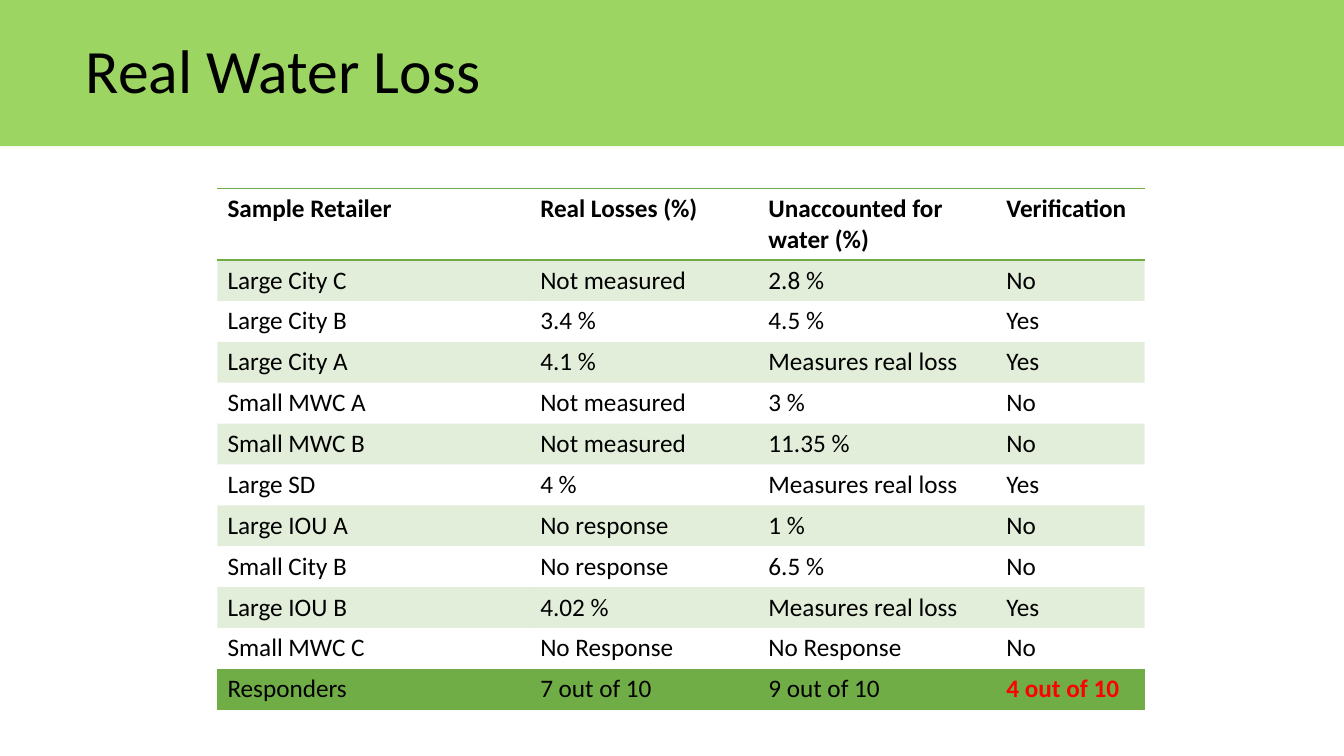
from lxml import etree
from pptx import Presentation
from pptx.dml.color import RGBColor
from pptx.enum import text
from pptx.oxml import ns
from pptx.util import Pt

FONT = "Calibri"
BLACK, RED, BANNER_GREEN, TABLE_GREEN = "000000", "FF0000", "92D050", "70AD47"
PLAIN_TABLE_STYLE = "{2D5ABB26-0587-4C30-8999-92F81FD0307C}"
COLUMN_WIDTHS = [223.4, 163, 170, 106]
ROW_HEIGHT = 29.2
ROWS = [
    ("Sample Retailer", "Real Losses (%)", "Unaccounted for water (%)", "Verification"),
    ("Large City C", "Not measured", "2.8 %", "No"),
    ("Large City B", "3.4 %", "4.5 %", "Yes"),
    ("Large City A", "4.1 %", "Measures real loss", "Yes"),
    ("Small MWC A", "Not measured", "3 %", "No"),
    ("Small MWC B", "Not measured", "11.35 %", "No"),
    ("Large SD", "4 %", "Measures real loss", "Yes"),
    ("Large IOU A", "No response", "1 %", "No"),
    ("Small City B", "No response", "6.5 %", "No"),
    ("Large IOU B", "4.02 %", "Measures real loss", "Yes"),
    ("Small MWC C", "No Response", "No Response", "No"),
    ("Responders", "7 out of 10", "9 out of 10", "4 out of 10"),
]


def set_color(color_format, color):
    color_format.rgb = RGBColor.from_string(color)


def fill_translucent(fill, color, percent):
    fill.solid()
    set_color(fill.fore_color, color)
    rgb = fill._xPr.find(".//" + ns.qn("a:srgbClr"))
    etree.SubElement(rgb, ns.qn("a:alpha"), val=str(percent * 1000))


def format_paragraph(paragraph, size, color=BLACK, bold=False):
    font = paragraph.font
    font.name, font.size, font.bold = FONT, Pt(size), bold
    set_color(font.color, color)


def add_border(cell, side):
    """Draw one green cell edge; side is T or B. Call it before filling the cell."""
    properties = cell._tc.get_or_add_tcPr()
    line = etree.SubElement(properties, ns.qn("a:ln" + side), w=str(Pt(1)))
    solid = etree.SubElement(line, ns.qn("a:solidFill"))
    etree.SubElement(solid, ns.qn("a:srgbClr"), val=TABLE_GREEN)


def add_title_banner(slide, title):
    banner = slide.shapes.title
    banner.left, banner.top, banner.width, banner.height = Pt(0), Pt(0), Pt(960), Pt(104.4)
    fill_translucent(banner.fill, BANNER_GREEN, 89)
    frame = banner.text_frame
    frame.text = title
    frame.word_wrap = True
    frame.auto_size = text.MSO_AUTO_SIZE.NONE
    frame.vertical_anchor = text.MSO_ANCHOR.MIDDLE
    frame.margin_left = Pt(61.2)
    paragraph = frame.paragraphs[0]
    paragraph.alignment = text.PP_ALIGN.LEFT
    paragraph.line_spacing = 0.9
    format_paragraph(paragraph, 44)


def add_loss_table(slide):
    last = len(ROWS) - 1
    table = slide.shapes.add_table(
        len(ROWS), len(COLUMN_WIDTHS), Pt(155.3), Pt(134.6),
        Pt(sum(COLUMN_WIDTHS)), Pt(ROW_HEIGHT * len(ROWS))).table
    table._tbl.tblPr.find(ns.qn("a:tableStyleId")).text = PLAIN_TABLE_STYLE
    for column, width in zip(table.columns, COLUMN_WIDTHS):
        column.width = Pt(width)
    for row_index, values in enumerate(ROWS):
        table.rows[row_index].height = Pt(ROW_HEIGHT)
        for column_index, value in enumerate(values):
            cell = table.cell(row_index, column_index)
            cell.text = value
            highlighted = row_index == last and column_index == len(values) - 1
            format_paragraph(cell.text_frame.paragraphs[0], 18,
                             RED if highlighted else BLACK,
                             bold=highlighted or row_index == 0)
            if row_index == 0:
                add_border(cell, "T")
            if row_index in (0, last):
                add_border(cell, "B")
            if row_index % 2:
                fill_translucent(cell.fill, TABLE_GREEN, 20)
            else:
                cell.fill.background()


def main():
    presentation = Presentation()
    presentation.slide_width, presentation.slide_height = Pt(960), Pt(540)
    title_only = presentation.slide_layouts[5]
    slide = presentation.slides.add_slide(title_only)
    add_title_banner(slide, "Real Water Loss")
    add_loss_table(slide)
    presentation.save("out.pptx")


if __name__ == "__main__":
    main()
